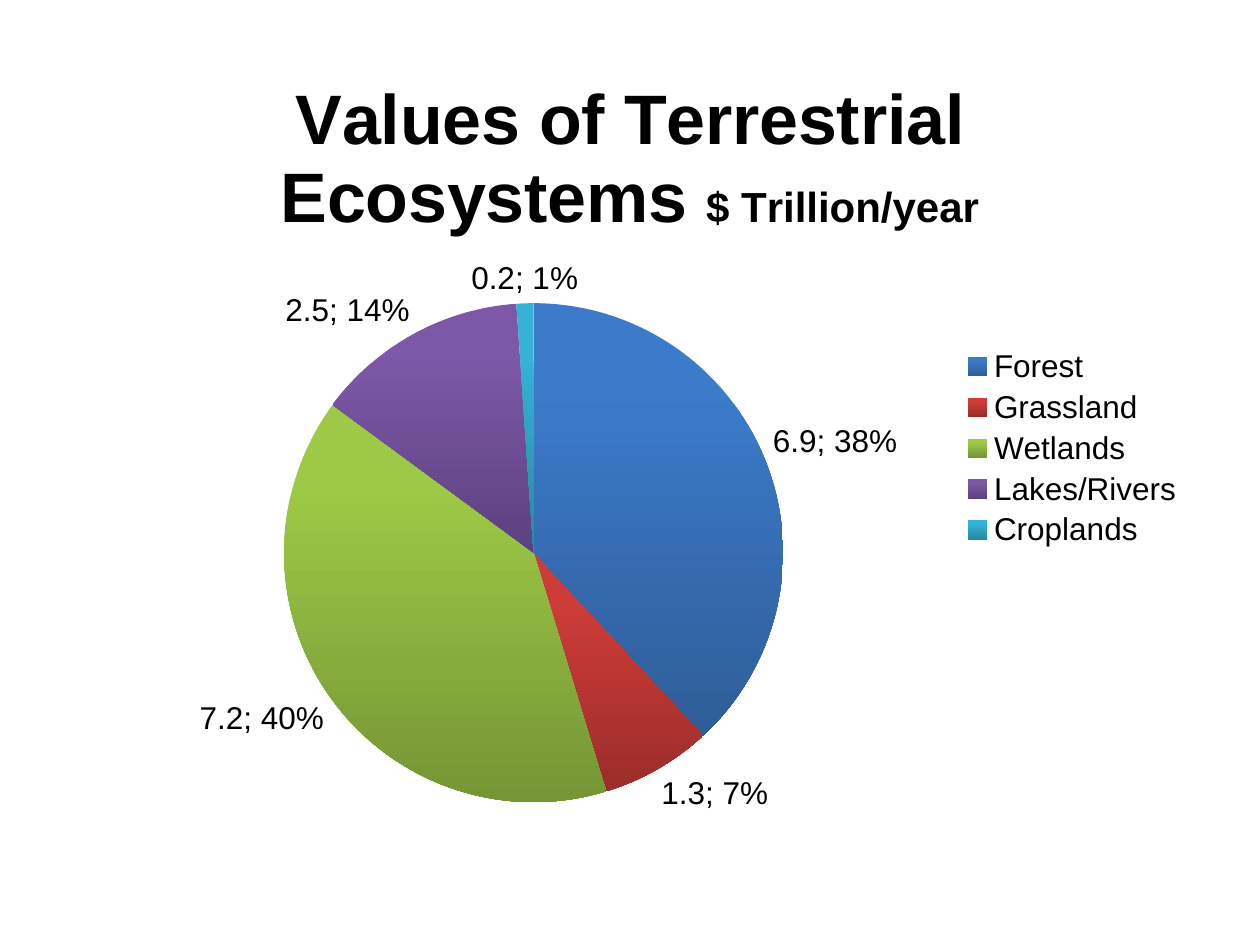
from typing import NamedTuple

from lxml.etree import SubElement
from pptx import Presentation
from pptx.chart.chart import Chart
from pptx.chart.data import CategoryChartData
from pptx.dml.color import RGBColor
from pptx.enum.chart import XL_CHART_TYPE as ChartType
from pptx.enum.chart import XL_LABEL_POSITION as LabelPosition
from pptx.enum.chart import XL_LEGEND_POSITION as LegendPosition
from pptx.oxml import parse_xml
from pptx.oxml.ns import nsdecls, qn
from pptx.text.text import Font
from pptx.util import Cm, Pt

COLOURS = {
    "text": "000000",
    "blue_light": "3C7ACA", "blue_dark": "2E5E98",
    "red_light": "CE3C39", "red_dark": "9B2D2A",
    "green_light": "9DC946", "green_dark": "769535",
    "purple_light": "7D58A8", "purple_dark": "5D417E",
    "teal_light": "35B3D6", "teal_dark": "2888A3",
}


class Ecosystem(NamedTuple):
    name: str
    value: float
    hue: str


class Area(NamedTuple):
    x: float
    y: float
    w: float
    h: float


ECOSYSTEMS = [
    Ecosystem("Forest", 6.9, "blue"),
    Ecosystem("Grassland", 1.3, "red"),
    Ecosystem("Wetlands", 7.2, "green"),
    Ecosystem("Lakes/Rivers", 2.5, "purple"),
    Ecosystem("Croplands", 0.2, "teal"),
]
PIE_AREA = Area(0.195, 0.316, 0.44, 0.631)
LEGEND_AREA = Area(0.79, 0.367, 0.2, 0.265)


def style_font(font: Font, size: float, bold: bool = False) -> None:
    font.name, font.size, font.bold = "Arial", Pt(size), bold
    font.color.rgb = RGBColor.from_string(COLOURS["text"])


def make_layout(area: Area, inner: bool = False):
    layout = parse_xml(f"<c:layout {nsdecls('c')}/>")
    manual = SubElement(layout, qn("c:manualLayout"))
    settings = {"layoutTarget": "inner"} if inner else {}
    settings |= {"xMode": "edge", "yMode": "edge"}
    settings |= {key: str(value) for key, value in area._asdict().items()}
    for tag, value in settings.items():
        SubElement(manual, qn(f"c:{tag}")).set("val", value)
    return layout


def add_title(chart: Chart) -> None:
    chart.has_title = True
    para = chart.chart_title.text_frame.paragraphs[0]
    for text, size in (("Values of Terrestrial Ecosystems ", 40), ("$ Trillion/year", 24)):
        span = para.add_run()
        span.text = text
        style_font(span.font, size, bold=True)


def add_legend(chart: Chart) -> None:
    chart.has_legend = True
    legend = chart.legend
    legend.position = LegendPosition.RIGHT
    legend.include_in_layout = False
    style_font(legend.font, 18)
    element = legend._element
    for old in element.findall(qn("c:layout")):
        element.remove(old)
    element.find(qn("c:legendPos")).addnext(make_layout(LEGEND_AREA))


def style_pie(chart: Chart) -> None:
    plot_area = chart._chartSpace.chart.plotArea
    for old in plot_area.findall(qn("c:layout")):
        plot_area.remove(old)
    plot_area.insert(0, make_layout(PIE_AREA, inner=True))
    plot = chart.plots[0]
    plot.vary_by_categories = True
    series = plot.series[0]
    for index, ecosystem in enumerate(ECOSYSTEMS):
        fill = series.points[index].format.fill
        fill.gradient()
        fill.gradient_angle = 270
        for stop, shade, position in zip(fill.gradient_stops, ("light", "dark"), (0.2, 1)):
            stop.color.rgb = RGBColor.from_string(COLOURS[f"{ecosystem.hue}_{shade}"])
            stop.position = position
    labels = series.data_labels
    labels.show_value = labels.show_percentage = True
    labels.position = LabelPosition.OUTSIDE_END
    style_font(labels.font, 18)
    separator = parse_xml(f"<c:separator {nsdecls('c')}>; </c:separator>")
    labels._element.find(qn("c:showBubbleSize")).addnext(separator)


def main() -> None:
    """Build the slide with the pie chart of ecosystem values."""
    deck = Presentation()
    deck.slide_width, deck.slide_height = Cm(25.4), Cm(19.05)
    page = deck.slides.add_slide(deck.slide_layouts[6])
    data = CategoryChartData()
    data.categories = [ecosystem.name for ecosystem in ECOSYSTEMS]
    data.add_series("Series 1", [ecosystem.value for ecosystem in ECOSYSTEMS])
    frame = page.shapes.add_chart(
        ChartType.PIE, Cm(1.27), Cm(1.07), Cm(22.86), Cm(15.95), data
    )
    chart = frame.chart
    style_font(chart.font, 18)
    chart.font.name = "Calibri"
    add_title(chart)
    add_legend(chart)
    style_pie(chart)
    deck.save("out.pptx")


if __name__ == "__main__":
    main()
